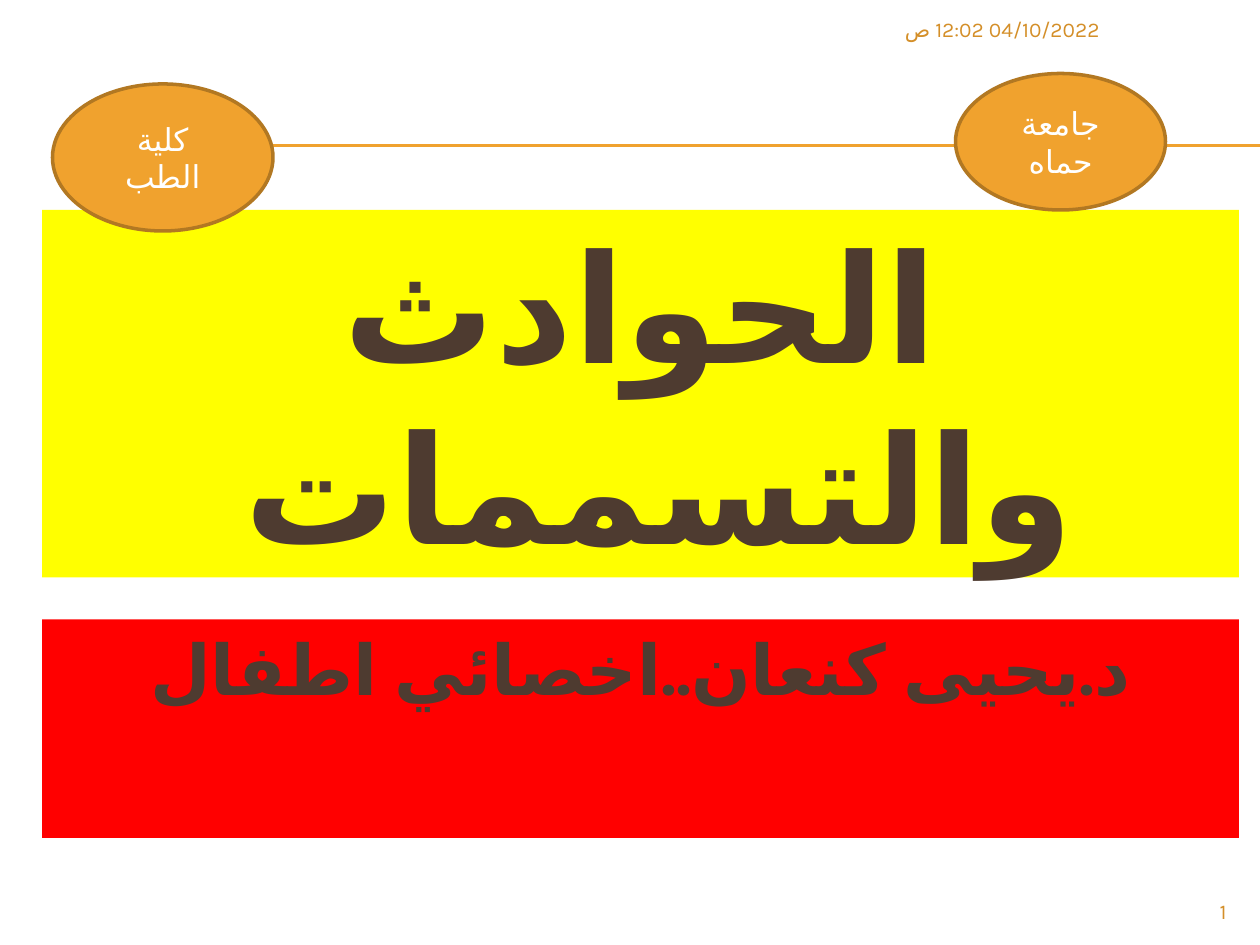
from dataclasses import dataclass

from lxml import etree
from pptx import Presentation
from pptx import util as u
from pptx.dml.color import RGBColor
from pptx.enum import shapes, text
from pptx.oxml.ns import qn

W, H = 10, 7.5
COL, ROW = W / 120, H / 90
FONT = "Karla"
YELLOW = RGBColor(0xFF, 0xFF, 0x00)
RED = RGBColor(0xFF, 0x00, 0x00)
WHITE = RGBColor(0xFF, 0xFF, 0xFF)
BROWN = RGBColor(0x4E, 0x3B, 0x30)
ORANGE = RGBColor(0xF0, 0xA2, 0x2E)
DARK_ORANGE = RGBColor(0xB2, 0x78, 0x22)
FOOTER = RGBColor(0xD4, 0x8F, 0x29)
LEFT, CENTER, RIGHT = text.PP_ALIGN.LEFT, text.PP_ALIGN.CENTER, text.PP_ALIGN.RIGHT
TOP, MIDDLE = text.MSO_ANCHOR.TOP, text.MSO_ANCHOR.MIDDLE


@dataclass
class Box:
    col: float
    row: float
    cols: float
    rows: float

    def lengths(self) -> list:
        return [u.Inches(v) for v in (self.col * COL, self.row * ROW,
                                      self.cols * COL, self.rows * ROW)]


@dataclass
class Label:
    words: str
    size: float
    color: RGBColor
    align: text.PP_ALIGN = CENTER
    anchor: text.MSO_ANCHOR = MIDDLE
    bold: bool = False


def write(sp, label: Label) -> None:
    tf = sp.text_frame
    tf.text = label.words
    tf.word_wrap = True
    tf.auto_size = text.MSO_AUTO_SIZE.NONE
    tf.vertical_anchor = label.anchor
    p = tf.paragraphs[0]
    p.alignment = label.align
    pPr = p._p.get_or_add_pPr()
    pPr.set("rtl", "1")
    p.font.name = FONT
    p.font.size = u.Pt(label.size)
    p.font.bold = label.bold
    p.font.color.rgb = label.color
    etree.SubElement(pPr.find(qn("a:defRPr")), qn("a:cs"), typeface=FONT)
    p.runs[0].font.language_id = None
    p.runs[0]._r.get_or_add_rPr().set("lang", "ar-SY")


def add_rule(s, y: float) -> None:
    rule = s.shapes.add_connector(shapes.MSO_CONNECTOR.STRAIGHT, u.Inches(0.56),
                                  u.Inches(y), u.Inches(W), u.Inches(y))
    rule.line.color.rgb = ORANGE
    rule.line.width = u.Pt(0.75)
    etree.SubElement(rule._element.spPr, qn("a:effectLst"))


def fill_placeholder(sp, box: Box, color: RGBColor, label: Label) -> None:
    sp.left, sp.top, sp.width, sp.height = box.lengths()
    sp.fill.solid()
    sp.fill.fore_color.rgb = color
    write(sp, label)


def add_badge(s, box: Box, words: str) -> None:
    sp = s.shapes.add_shape(shapes.MSO_SHAPE.OVAL, *box.lengths())
    sp.shadow.inherit = False
    sp.fill.solid()
    sp.fill.fore_color.rgb = ORANGE
    sp.line.color.rgb = DARK_ORANGE
    sp.line.width = u.Pt(2)
    write(sp, Label(words, 18, WHITE))


def add_footer(s, box: Box, words: str, align: text.PP_ALIGN) -> None:
    write(s.shapes.add_textbox(*box.lengths()), Label(words, 12, FOOTER, align, TOP))


def main() -> None:
    prs = Presentation()
    prs.slide_width, prs.slide_height = u.Inches(W), u.Inches(H)
    s = prs.slides.add_slide(prs.slide_layouts[0])
    title, body = s.placeholders
    fill_placeholder(title, Box(4, 20, 114, 35), YELLOW,
                     Label("الحوادث والتسممات ", 86.4, BROWN, bold=True))
    fill_placeholder(body, Box(4, 59, 114, 20.8), RED,
                     Label("د.يحيى كنعان..اخصائي اطفال", 40, BROWN, anchor=TOP, bold=True))
    for y in (1.15, 1.16):
        add_rule(s, y)
    add_badge(s, Box(91, 7, 20, 13), "جامعة حماه")
    add_badge(s, Box(5, 8, 21, 14), "كلية الطب")
    add_footer(s, Box(108, 85, 10, 3.2), "1", RIGHT)
    add_footer(s, Box(85, 1, 33, 3.8), "04/10/2022 12:02 ص", LEFT)
    prs.save("out.pptx")


if __name__ == "__main__":
    main()
